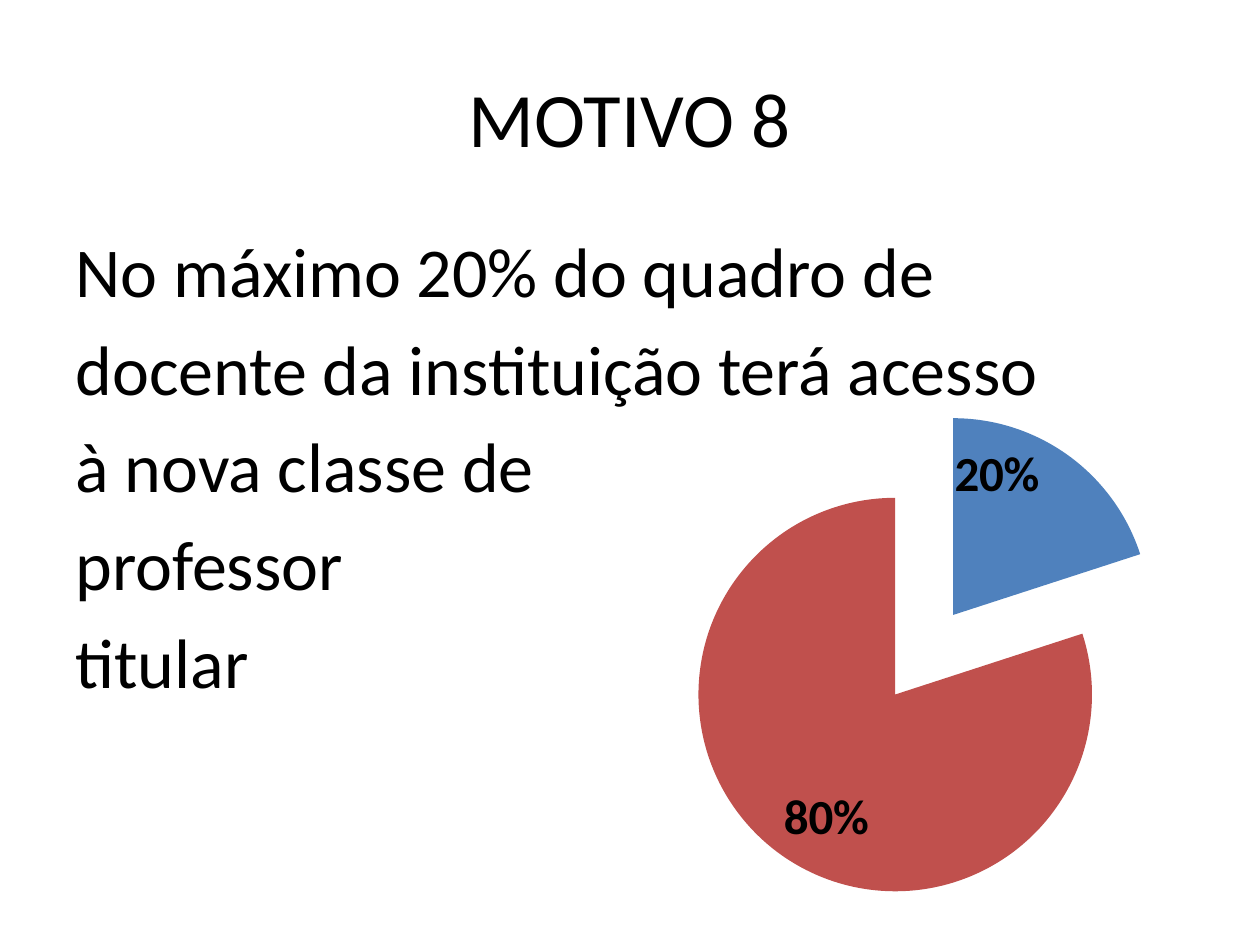
from dataclasses import dataclass

from lxml import etree
from pptx import Presentation
from pptx import util as u
from pptx.chart import data
from pptx.dml.color import RGBColor
from pptx.enum import chart as ch, text
from pptx.oxml import ns


@dataclass(frozen=True)
class Theme:
    """Colours and type sizes of the slide."""
    font: str = "Calibri"
    ink: str = "000000"
    hues: tuple = ("4F81BD", "C0504D")
    head: int = 44
    body: int = 40
    label: int = 28
    base: int = 10


LOOK = Theme()


def style(font, size, bold=False):
    """Apply the theme typeface and ink to a font."""
    font.name, font.size, font.bold = LOOK.font, u.Pt(size), bold
    font.color.rgb = RGBColor.from_string(LOOK.ink)


def place(shape, box):
    """Move a shape into a box given in centimetres."""
    shape.left, shape.top, shape.width, shape.height = map(u.Cm, box)


def add_title(slide, box, words):
    """Fill the title placeholder."""
    title = slide.shapes.title
    place(title, box)
    frame = title.text_frame
    frame.text = words
    frame.vertical_anchor = text.MSO_ANCHOR.MIDDLE
    para = frame.paragraphs[0]
    para.alignment = text.PP_ALIGN.CENTER
    style(para.runs[0].font, LOOK.head)


def add_body(slide, box, lines):
    """Fill the body placeholder with plain lines, without bullets."""
    body = slide.placeholders[1]
    place(body, box)
    frame = body.text_frame
    frame.text = "\n".join(lines)
    frame.auto_size = text.MSO_AUTO_SIZE.NONE
    for para in frame.paragraphs:
        para.space_before = u.Pt(LOOK.body * 0.2)
        props = para._p.get_or_add_pPr()
        props.set("marL", "0")
        props.set("indent", "0")
        etree.SubElement(props, ns.qn("a:buNone"))
        style(para.runs[0].font, LOOK.body)


def layout(**parts):
    """Return a manual chart layout element."""
    root = etree.Element(ns.qn("c:layout"))
    manual = etree.SubElement(root, ns.qn("c:manualLayout"))
    for name, val in parts.items():
        etree.SubElement(manual, ns.qn(f"c:{name}")).set("val", str(val))
    return root


def add_pie(slide, box, cats, vals):
    """Add the exploded pie with a percentage on each slice."""
    source = data.CategoryChartData(number_format="0%")
    source.categories = cats
    source.add_series("Series 1", vals)
    chart = slide.shapes.add_chart(
        ch.XL_CHART_TYPE.PIE, *map(u.Cm, box), source).chart
    chart.has_legend = chart.has_title = False
    style(chart.font, LOOK.base)
    plot = chart.plots[0]
    plot.vary_by_categories = True
    series = plot.series[0]
    for i, hue in enumerate(LOOK.hues):
        fill = series.points[i].format.fill
        fill.solid()
        fill.fore_color.rgb = RGBColor.from_string(hue)

    labels = series.data_labels
    labels.show_value = True
    labels.number_format, labels.number_format_is_linked = "0%", False
    first = series.points[0].data_label
    for label in (labels, first):
        label.position = ch.XL_LABEL_POSITION.INSIDE_END
        style(label.font, LOOK.label, True)
    mark = series._element.find(".//" + ns.qn("c:dLbl"))
    mark.find(ns.qn("c:idx")).addnext(layout(x=-0.04, y=-0.03))

    burst = etree.Element(ns.qn("c:explosion"))
    burst.set("val", "25")
    series._element.find(ns.qn("c:dPt")).addprevious(burst)
    area = chart._chartSpace.chart.plotArea
    for old in area.findall(ns.qn("c:layout")):
        area.remove(old)
    area.insert(0, layout(layoutTarget="inner", xMode="edge", yMode="edge",
                          x=0.09, y=0.1, w=0.91, h=0.9))


def main():
    """Build and save the slide."""
    deck = Presentation()
    deck.slide_width, deck.slide_height = u.Cm(25.4), u.Cm(19.05)
    slide = deck.slides.add_slide(deck.slide_layouts[1])
    add_title(slide, (1.27, 0.76, 22.86, 3.18), "MOTIVO 8")
    add_body(slide, (1.27, 4.45, 22.43, 12.57), (
        "No máximo 20% do quadro de",
        "docente da instituição terá acesso",
        "à nova classe de",
        "professor",
        "titular"))
    add_pie(slide, (11.71, 7.14, 12.7, 11.02), ("1", "2"), (0.2, 0.8))
    deck.save("out.pptx")


if __name__ == "__main__":
    main()
